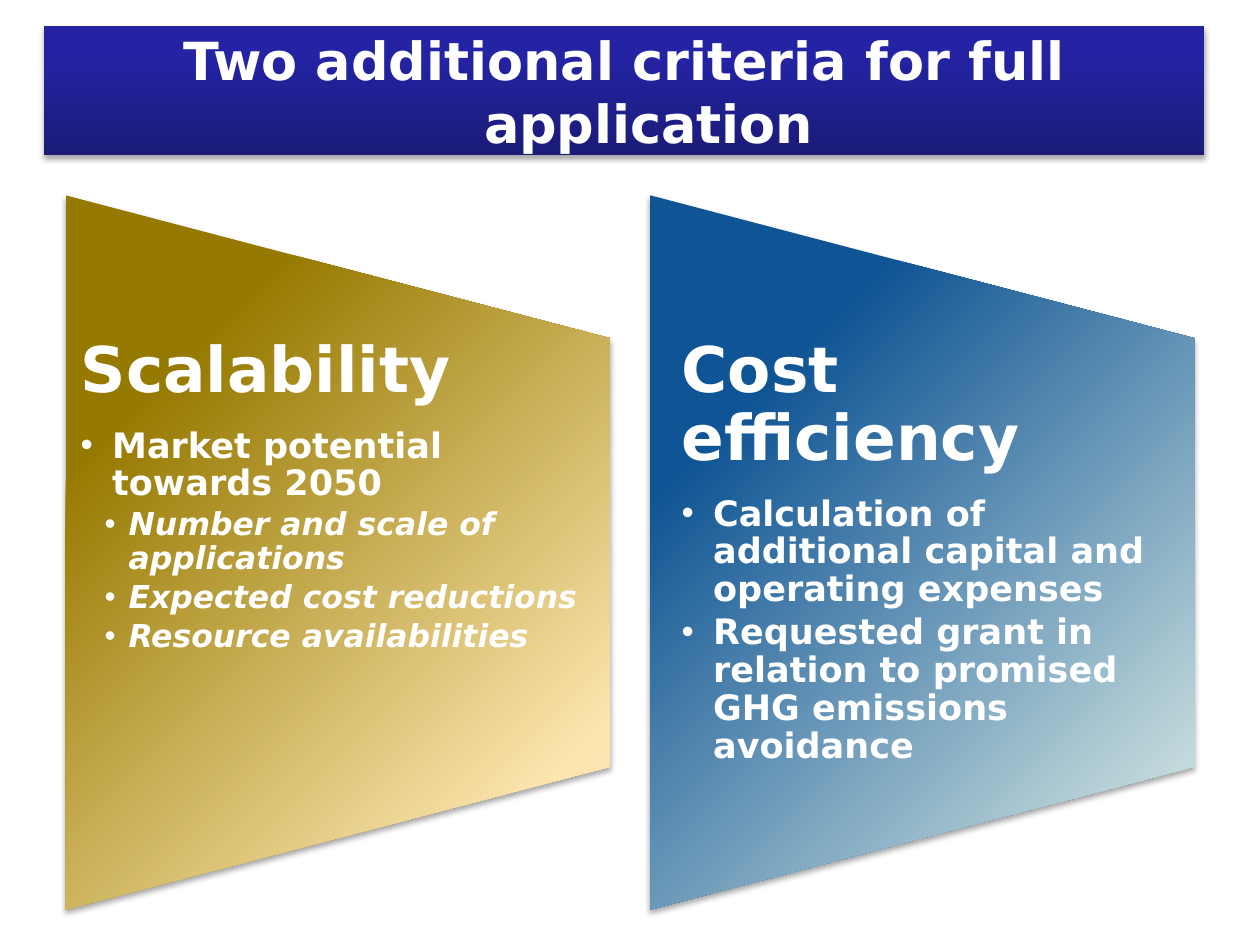
from dataclasses import dataclass

from lxml.etree import SubElement
from pptx import Presentation
from pptx.dml.color import RGBColor
from pptx.enum.shapes import MSO_SHAPE
from pptx.enum.text import MSO_ANCHOR, MSO_AUTO_SIZE, PP_ALIGN
from pptx.oxml import parse_xml
from pptx.oxml.ns import nsdecls, qn
from pptx.shapes.base import BaseShape
from pptx.slide import Slide
from pptx.util import Inches, Pt

WHITE = RGBColor(0xFF, 0xFF, 0xFF)
BLACK = RGBColor(0x00, 0x00, 0x00)
NAVY_LIGHT = RGBColor(0x23, 0x23, 0xA3)
NAVY_DARK = RGBColor(0x1B, 0x1B, 0x78)
GOLD = RGBColor(0x96, 0x79, 0x00)
SAND = RGBColor(0xFC, 0xE5, 0xAE)
PEACH = RGBColor(0xFF, 0xE6, 0xC5)
BLUE = RGBColor(0x0F, 0x54, 0x94)
MIST = RGBColor(0xC3, 0xDA, 0xDC)
PALE = RGBColor(0xE2, 0xEC, 0xED)

FONT = "DejaVu Sans"
PANEL_WIDTH, PANEL_HEIGHT, PANEL_TOP = 4.32, 5.67, 1.55
TEXT_TOP, TEXT_HEIGHT = 2.68, 3.4


@dataclass
class Level:
    size: int
    after: float
    margin: float = 0
    hanging: float = 0
    italic: bool = False


HEADING = Level(36, 0.35)
POINT = Level(20, 0.15, 0.25, 0.25)
DETAIL = Level(18, 0.15, 0.38, 0.19, True)


@dataclass
class Panel:
    left: float
    inset: float
    stops: list[tuple[int, RGBColor]]
    lines: list[tuple[Level, str]]


PANELS = [
    Panel(0.52, 0.12, [(22, GOLD), (85, SAND), (100, PEACH)], [
        (HEADING, "Scalability"),
        (POINT, "Market potential towards 2050"),
        (DETAIL, "Number and scale of applications"),
        (DETAIL, "Expected cost reductions"),
        (DETAIL, "Resource availabilities"),
    ]),
    Panel(5.16, 0.25, [(24, BLUE), (88, MIST), (100, PALE)], [
        (HEADING, "Cost efficiency"),
        (POINT, "Calculation of additional capital and operating expenses"),
        (POINT, "Requested grant in relation to promised GHG emissions avoidance"),
    ]),
]


def set_values(target, values: dict) -> None:
    for name, value in values.items():
        setattr(target, name, value)


def place(shape: BaseShape, left: float, top: float, width: float, height: float) -> None:
    set_values(shape, {"left": Inches(left), "top": Inches(top),
                       "width": Inches(width), "height": Inches(height)})


def add_gradient_and_shadow(shape: BaseShape, stops: list[tuple[int, RGBColor]], angle: int) -> None:
    stop_xml = "".join(
        f'<a:gs pos="{position * 1000}"><a:srgbClr val="{color}"/></a:gs>'
        for position, color in stops)
    gradient = parse_xml(
        f'<a:gradFill {nsdecls("a")} rotWithShape="0"><a:gsLst>{stop_xml}</a:gsLst>'
        f'<a:lin ang="{angle * 60000}" scaled="0"/></a:gradFill>')
    effects = parse_xml(
        f'<a:effectLst {nsdecls("a")}><a:outerShdw blurRad="{Pt(3.1)}" dist="{Pt(1.8)}" '
        f'dir="5400000" rotWithShape="0"><a:srgbClr val="{BLACK}"><a:alpha val="35000"/>'
        f'</a:srgbClr></a:outerShdw></a:effectLst>')
    shape.line.fill.background()
    properties = shape.line._ln.getparent()
    shape.line._ln.addprevious(gradient)
    properties.append(effects)


def set_indent(para, margin: float, hanging: float) -> None:
    properties = para._p.get_or_add_pPr()
    properties.set("marL", str(Inches(margin)))
    properties.set("indent", str(-Inches(hanging)))


def format_font(para, size: int, italic: bool = False) -> None:
    set_values(para.font, {"name": FONT, "size": Pt(size), "bold": True, "italic": italic})
    para.font.color.rgb = WHITE


def draw_title(slide: Slide, text: str) -> None:
    title = slide.shapes.title
    place(title, 0.35, 0.21, 9.21, 1.02)
    add_gradient_and_shadow(title, [(0, NAVY_LIGHT), (25, NAVY_LIGHT), (100, NAVY_DARK)], 90)
    frame = title.text_frame
    frame.text = text
    set_values(frame, {"word_wrap": True, "auto_size": MSO_AUTO_SIZE.NONE,
                       "vertical_anchor": MSO_ANCHOR.MIDDLE})
    para = frame.paragraphs[0]
    para.alignment = PP_ALIGN.CENTER
    set_indent(para, 0.39, 0.39)
    format_font(para, 30)


def draw_panel(slide: Slide, panel: Panel, body: BaseShape) -> None:
    overhang = (PANEL_HEIGHT - PANEL_WIDTH) / 2
    trapezoid = slide.shapes.add_shape(
        MSO_SHAPE.FLOWCHART_MANUAL_OPERATION,
        Inches(panel.left - overhang), Inches(PANEL_TOP + overhang),
        Inches(PANEL_HEIGHT), Inches(PANEL_WIDTH))
    trapezoid.rotation = 270
    add_gradient_and_shadow(trapezoid, panel.stops, 45)
    body._element.addprevious(trapezoid._element)

    place(body, panel.left, TEXT_TOP, PANEL_WIDTH, TEXT_HEIGHT)
    frame = body.text_frame
    set_values(frame, {"word_wrap": True, "auto_size": MSO_AUTO_SIZE.NONE,
                       "vertical_anchor": MSO_ANCHOR.TOP,
                       "margin_left": Inches(panel.inset), "margin_right": Inches(panel.inset),
                       "margin_top": 0, "margin_bottom": 0})
    frame.text = "\n".join(text for _, text in panel.lines)
    levels = [HEADING, POINT, DETAIL]
    for para, (level, _) in zip(frame.paragraphs, panel.lines):
        set_values(para, {"level": levels.index(level), "line_spacing": 0.9,
                          "space_before": Pt(0), "space_after": Pt(level.size * level.after),
                          "alignment": PP_ALIGN.LEFT})
        set_indent(para, level.margin, level.hanging)
        properties = para._p.get_or_add_pPr()
        if level is HEADING:
            SubElement(properties, qn("a:buNone"))
        else:
            SubElement(properties, qn("a:buChar")).set("char", "•")
        format_font(para, level.size, level.italic)


def main() -> None:
    deck = Presentation()
    set_values(deck, {"slide_width": Inches(10), "slide_height": Inches(7.5)})
    slide = deck.slides.add_slide(deck.slide_layouts[3])
    draw_title(slide, "Two additional criteria for full application")
    bodies = [slide.placeholders[1], slide.placeholders[2]]
    for panel, body in zip(PANELS, bodies):
        draw_panel(slide, panel, body)
    deck.save("out.pptx")


if __name__ == "__main__":
    main()
